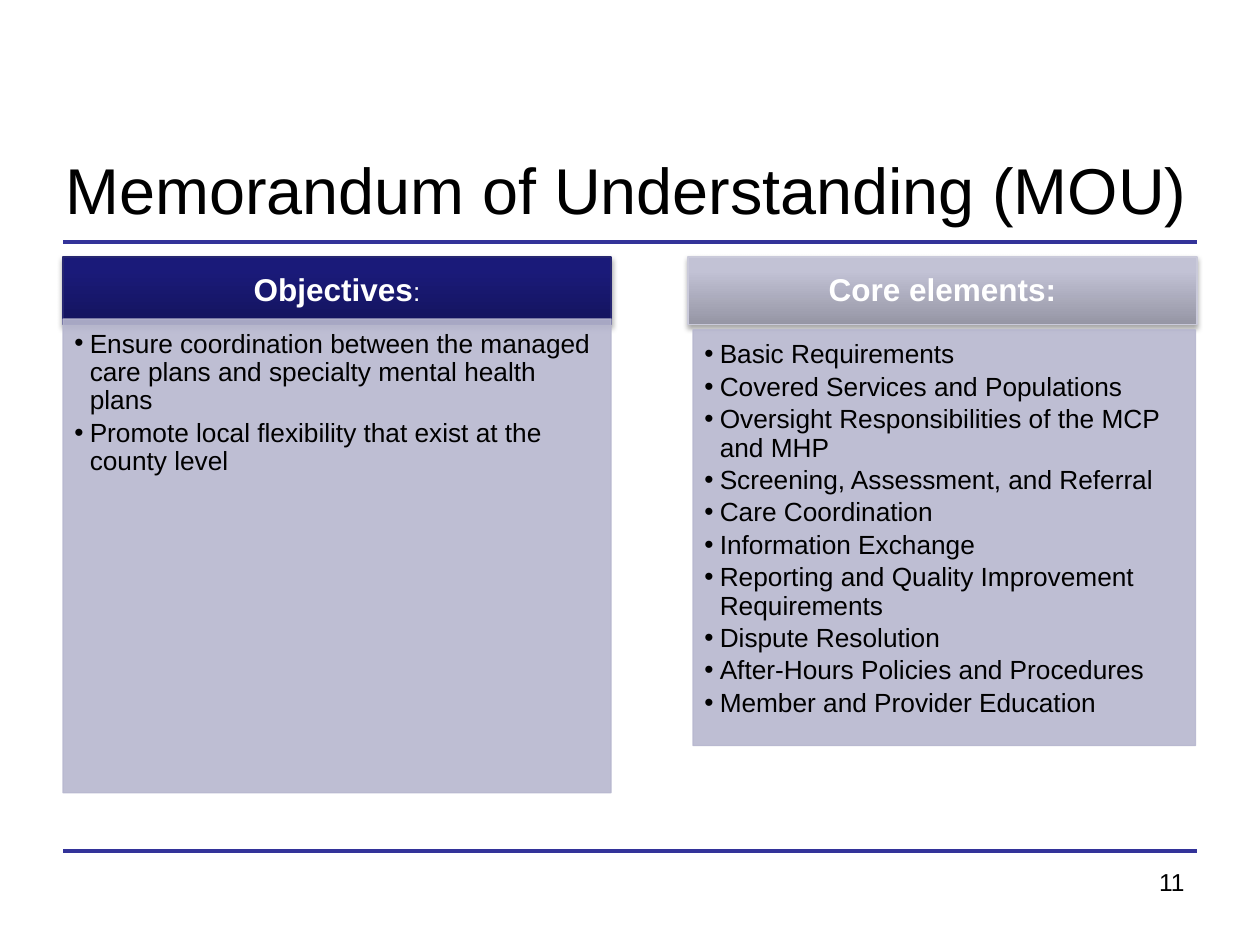
from lxml import etree
from pptx import Presentation, util as u
from pptx.dml.color import RGBColor
from pptx.enum import shapes, text
from pptx.oxml.ns import nsdecls, qn

LEFT, RIGHT = 1.27, 24.13
HEADER_TOP, HEADER_HEIGHT = 5.18, 1.37
BODY_FONT = {"name": "Arial", "size": u.Pt(15), "bold": False}
HEADER_FONT = {"name": "Arial", "size": u.Pt(18), "bold": True}
HEADER_INSETS = (0.36, 0.2, 0.36, 0.2)
LIST_INSETS = (0.23, 0.23, 0.3, 0.33)

PANELS = [
    {
        "header": (LEFT, HEADER_TOP, 11.05, HEADER_HEIGHT),
        "body": (LEFT, 6.43, 11.05, 9.55),
        "stops": [(0, "14145D"), (80, "1A1A79"), (100, "18187B")],
        "outline": "262671",
        "heading": [("Objectives", HEADER_FONT), (":", BODY_FONT)],
        "items": [
            "Ensure coordination between the managed care plans and specialty mental health plans",
            "Promote local flexibility that exist at the county level",
        ],
    },
    {
        "header": (13.87, HEADER_TOP, 10.26, HEADER_HEIGHT),
        "body": (13.97, 6.65, 10.13, 8.38),
        "stops": [(0, "9595A4"), (80, "C2C2D5"), (100, "C2C2D7")],
        "outline": "CACADA",
        "heading": [("Core elements:", HEADER_FONT)],
        "items": [
            "Basic Requirements",
            "Covered Services and Populations",
            "Oversight Responsibilities of the MCP and MHP",
            "Screening, Assessment, and Referral",
            "Care Coordination",
            "Information Exchange",
            "Reporting and Quality Improvement Requirements",
            "Dispute Resolution",
            "After-Hours Policies and Procedures",
            "Member and Provider Education",
        ],
    },
]


def color(value):
    return RGBColor.from_string(value)


def set_values(target, values):
    for name, value in values.items():
        setattr(target, name, value)


def place(shape, frame):
    lengths = map(u.Cm, frame)
    set_values(shape, dict(zip(("left", "top", "width", "height"), lengths)))


def set_frame(shape, anchor, insets=None):
    set_values(shape.text_frame, {
        "word_wrap": True,
        "auto_size": text.MSO_AUTO_SIZE.NONE,
        "vertical_anchor": anchor,
    })
    if insets:
        names = ("margin_left", "margin_top", "margin_right", "margin_bottom")
        set_values(shape.text_frame, dict(zip(names, map(u.Cm, insets))))


def add_span(para, words, font, font_color="000000"):
    span = para.add_run()
    span.text = words
    set_values(span.font, font)
    span.font.color.rgb = color(font_color)


def set_outline(shape, value, width):
    shape.line.color.rgb = color(value)
    shape.line.width = u.Pt(width)


def add_rule(page, top):
    rule = page.shapes.add_connector(
        shapes.MSO_CONNECTOR.STRAIGHT, u.Cm(LEFT), u.Cm(top), u.Cm(RIGHT), u.Cm(top))
    set_outline(rule, "333399", 2.25)
    etree.SubElement(rule.element.spPr, qn("a:effectLst"))


def set_gradient(shape, stops):
    """Fill from bottom to top with (percent, colour) stops."""
    marks = "".join(
        f'<a:gs pos="{percent * 1000}"><a:srgbClr val="{value}"/></a:gs>'
        for percent, value in stops)
    shape.element.spPr.find(qn("a:prstGeom")).addnext(etree.fromstring(
        f'<a:gradFill {nsdecls("a")} rotWithShape="1"><a:gsLst>{marks}</a:gsLst>'
        '<a:lin ang="16200000" scaled="0"/></a:gradFill>'))


def add_shadow(shape):
    shape.shadow.inherit = False
    shape.element.spPr.find(qn("a:effectLst")).append(etree.fromstring(
        f'<a:outerShdw {nsdecls("a")} blurRad="{u.Pt(3.1)}" dist="{u.Pt(1.8)}" '
        'dir="5400000" rotWithShape="0"><a:srgbClr val="000000">'
        '<a:alpha val="35000"/></a:srgbClr></a:outerShdw>'))


def add_header(page, panel):
    header = page.shapes.add_shape(
        shapes.MSO_SHAPE.RECTANGLE, *map(u.Cm, panel["header"]))
    set_gradient(header, panel["stops"])
    set_outline(header, panel["outline"], 0.75)
    add_shadow(header)
    set_frame(header, text.MSO_ANCHOR.MIDDLE, HEADER_INSETS)
    para = header.text_frame.paragraphs[0]
    set_values(para, {"alignment": text.PP_ALIGN.CENTER, "line_spacing": 0.9})
    for words, font in panel["heading"]:
        add_span(para, words, font, "FFFFFF")
    return header


def add_bullet(para):
    props = para._p.get_or_add_pPr()
    indent = u.Cm(0.31)
    props.set("marL", str(indent))
    props.set("indent", str(-indent))
    etree.SubElement(props, qn("a:buChar")).set("char", "•")


def fill_list(body, panel):
    place(body, panel["body"])
    body.fill.solid()
    body.fill.fore_color.rgb = color("B7B7CF")
    set_outline(body, "B7B7CF", 0.75)
    for tint in body.element.spPr.iter(qn("a:srgbClr")):
        etree.SubElement(tint, qn("a:alpha")).set("val", "90000")
    set_frame(body, text.MSO_ANCHOR.TOP, LIST_INSETS)
    for index, item in enumerate(panel["items"]):
        frame = body.text_frame
        para = frame.add_paragraph() if index else frame.paragraphs[0]
        add_bullet(para)
        set_values(para, {
            "alignment": text.PP_ALIGN.LEFT,
            "line_spacing": 0.9,
            "space_before": u.Pt(0),
            "space_after": u.Pt(2.3),
        })
        add_span(para, item, BODY_FONT)


def set_title(page, words):
    title = page.shapes.title
    place(title, (1.07, 2.54, 23.5, 2.54))
    set_frame(title, text.MSO_ANCHOR.MIDDLE)
    para = title.text_frame.paragraphs[0]
    para.alignment = text.PP_ALIGN.LEFT
    add_span(para, words, {"name": "Arial", "size": u.Pt(37)})


def add_page_number(page, number):
    box = page.shapes.add_textbox(*map(u.Cm, (18.21, 17.35, 5.92, 1.32)))
    set_frame(box, text.MSO_ANCHOR.TOP)
    para = box.text_frame.paragraphs[0]
    para.alignment = text.PP_ALIGN.RIGHT
    add_span(para, number, {"name": "Arial", "size": u.Pt(14)})


def main():
    deck = Presentation()
    set_values(deck, {"slide_width": u.Cm(25.4), "slide_height": u.Cm(19.05)})
    page = deck.slides.add_slide(deck.slide_layouts.get_by_name("Two Content"))
    for top in (17.15, 4.88):
        add_rule(page, top)
    set_title(page, "Memorandum of Understanding (MOU)")
    add_page_number(page, "11")
    bodies = list(page.placeholders)[1:]
    for body, panel in zip(bodies, PANELS):
        header = add_header(page, panel)
        fill_list(body, panel)
        header.element.addnext(body.element)  # the list lies over its header
    deck.save("out.pptx")


if __name__ == "__main__":
    main()
